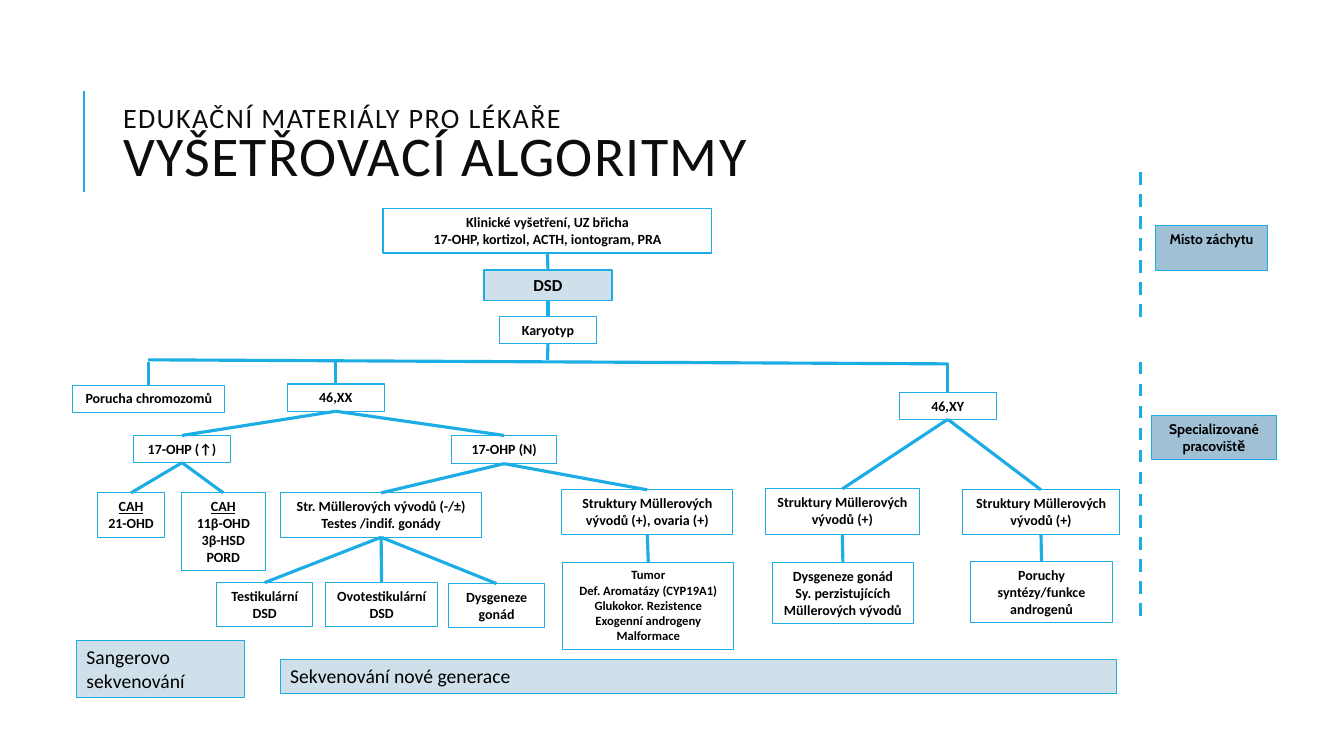
from pptx import Presentation
from pptx.dml.color import RGBColor
from pptx.enum.dml import MSO_LINE
from pptx.enum.shapes import MSO_CONNECTOR, MSO_SHAPE
from pptx.enum.text import MSO_ANCHOR, MSO_AUTO_SIZE, PP_ALIGN
from pptx.oxml.ns import qn
from pptx.util import Inches, Pt
from lxml.etree import SubElement

BLUE = RGBColor(0x1C, 0xAD, 0xE4)
PALE = RGBColor(0xCF, 0xE0, 0xEA)
STEEL = RGBColor(0xA0, 0xC1, 0xD5)
BLACK = RGBColor(0, 0, 0)
TITLE_INK = RGBColor(0x0D, 0x0D, 0x0D)
TOP, BOTTOM = 0, 2

# Content
TITLE_LINES = [("EDUKAČNÍ MATERIÁLY PRO LÉKAŘE", 20), ("VYŠETŘOVACÍ ALGORITMY", 40)]

# Flowchart boxes: left, top, width, height, text
BOXES = {
    "clinical": (3.8, 2.07, 3.26, 0.44,
                 "Klinické vyšetření, UZ břicha\n17-OHP, kortizol, ACTH, iontogram, PRA"),
    "dsd": (4.8, 2.68, 1.27, 0.3, "DSD"),
    "karyotype": (4.95, 3.14, 0.97, 0.27, "Karyotyp"),
    "chromosomes": (0.72, 3.82, 1.51, 0.27, "Porucha chromozomů"),
    "xx": (2.85, 3.81, 0.96, 0.27, "46,XX"),
    "xy": (8.92, 3.89, 0.96, 0.27, "46,XY"),
    "ohp_high": (1.32, 4.32, 0.97, 0.27, "17-OHP (↑)"),
    "ohp_normal": (4.48, 4.32, 1.04, 0.28, "17-OHP (N)"),
    "cah_21": (0.97, 4.89, 0.66, 0.44, "CAH\n21-OHD"),
    "cah_11": (1.8, 4.89, 0.83, 0.77, "CAH\n11β-OHD\n3β-HSD\nPORD"),
    "testes": (2.78, 4.89, 2, 0.44, "Str. Müllerových vývodů (-/±)\nTestes /indif. gonády"),
    "ovaries": (5.57, 4.86, 1.7, 0.44, "Struktury Müllerových vývodů (+), ovaria (+)"),
    "xy_left": (7.59, 4.85, 1.53, 0.45, "Struktury Müllerových vývodů (+)"),
    "xy_right": (9.55, 4.86, 1.55, 0.44, "Struktury Müllerových vývodů (+)"),
    "testicular": (2.15, 5.78, 0.95, 0.44, "Testikulární DSD"),
    "ovotesticular": (3.23, 5.78, 1.11, 0.44, "Ovotestikulární DSD"),
    "dysgenesis": (4.45, 5.79, 0.95, 0.44, "Dysgeneze gonád"),
    "tumor": (5.58, 5.58, 1.7, 0.86,
              "Tumor\nDef. Aromatázy (CYP19A1)\nGlukokor. Rezistence\n"
              "Exogenní androgeny\nMalformace"),
    "persistent": (7.66, 5.58, 1.4, 0.61,
                   "Dysgeneze gonád\nSy. perzistujících Müllerových vývodů"),
    "androgens": (9.63, 5.57, 1.4, 0.61, "Poruchy syntézy/funkce androgenů"),
}
BOX_STYLES = {
    "clinical": {"border": 1},
    "dsd": {"fill": PALE, "size": 12, "border": 1},
    "tumor": {"size": 9},
    "cah_21": {"underline_first": True},
    "cah_11": {"underline_first": True},
}
CHILDREN = {
    "clinical": ["dsd"],
    "dsd": ["karyotype"],
    "xx": ["ohp_high", "ohp_normal"],
    "xy": ["xy_left", "xy_right"],
    "ohp_high": ["cah_21", "cah_11"],
    "ohp_normal": ["testes", "ovaries"],
    "testes": ["testicular", "ovotesticular", "dysgenesis"],
    "ovaries": ["tumor"],
    "xy_left": ["persistent"],
    "xy_right": ["androgens"],
}

# Horizontal branch line under the karyotype, and the boxes hanging from it
BRANCH = (1.47, 3.57, 9.4, 3.61)
BRANCH_DROPS = {"chromosomes": 3.59, "xx": 3.57, "xy": 3.6}

SITES = [
    (11.46, 2.24, 1.11, 0.44, "Místo záchytu"),
    (11.42, 4.12, 1.24, 0.44, "Specializované\npracoviště"),
]
SITE_LINE_X = 11.31
SITE_SPANS = [(1.71, 3.16), (3.59, 6.19)]

METHODS = [
    (0.76, 6.35, 1.67, 0.57, "Sangerovo sekvenování"),
    (2.78, 6.54, 8.29, 0.34, "Sekvenování nové generace"),
]


def add_box(slide, left, top, width, height, text, fill=None, size=10, font="Calibri",
            bold=True, align=PP_ALIGN.CENTER, border=0.75, underline_first=False):
    shape = slide.shapes.add_shape(MSO_SHAPE.RECTANGLE, Inches(left), Inches(top),
                                   Inches(width), Inches(height))
    shape.shadow.inherit = False
    if fill is None:
        shape.fill.background()
    else:
        shape.fill.solid()
        shape.fill.fore_color.rgb = fill
    shape.line.color.rgb = BLUE
    shape.line.width = Pt(border)
    frame = shape.text_frame
    frame.word_wrap = True
    frame.vertical_anchor = MSO_ANCHOR.TOP
    frame.text = text
    for index, paragraph in enumerate(frame.paragraphs):
        paragraph.alignment = align
        for run in paragraph.runs:
            run.font.name = font
            run.font.size = Pt(size)
            run.font.bold = bold
            run.font.color.rgb = BLACK
            if underline_first and index == 0:
                run.font.underline = True
    return shape


def add_line(slide, x1, y1, x2, y2, width=2.25):
    line = slide.shapes.add_connector(MSO_CONNECTOR.STRAIGHT, Inches(x1), Inches(y1),
                                      Inches(x2), Inches(y2))
    line.line.color.rgb = BLUE
    line.line.width = Pt(width)
    SubElement(line._element.spPr, qn("a:effectLst"))
    return line


def add_title(slide):
    title = slide.shapes.title
    title.left, title.top = Inches(1.12), Inches(0.64)
    title.width, title.height = Inches(10.63), Inches(1.64)
    frame = title.text_frame
    frame.auto_size = MSO_AUTO_SIZE.NONE
    frame.vertical_anchor = MSO_ANCHOR.MIDDLE
    frame.text = "\v".join(text for text, size in TITLE_LINES)
    paragraph = frame.paragraphs[0]
    paragraph.alignment = PP_ALIGN.LEFT
    paragraph.line_spacing = 0.8
    for run, (text, size) in zip(paragraph.runs, TITLE_LINES):
        run.font.name = "Calibri"
        run.font.size = Pt(size)
        run.font.color.rgb = TITLE_INK
        run.font._element.set("spc", "100")


def add_flowchart(slide):
    boxes = {name: add_box(slide, *box, **BOX_STYLES.get(name, {}))
             for name, box in BOXES.items()}

    # Parent to child lines
    for parent, children in CHILDREN.items():
        for child in children:
            line = add_line(slide, 0, 0, 1, 1)
            line.begin_connect(boxes[parent], BOTTOM)
            line.end_connect(boxes[child], TOP)

    # Karyotype branch
    add_line(slide, *BRANCH)
    stem = add_line(slide, 5.43, 3.41, 5.43, 3.57)
    stem.begin_connect(boxes["karyotype"], BOTTOM)
    for name, start in BRANCH_DROPS.items():
        left, top, width = BOXES[name][:3]
        center = left + width / 2
        drop = add_line(slide, center, start, center, top)
        drop.end_connect(boxes[name], TOP)


def main():
    presentation = Presentation()
    presentation.slide_width, presentation.slide_height = Inches(13.33), Inches(7.5)
    slide = presentation.slides.add_slide(presentation.slide_layouts[5])

    # Title with its accent line
    add_title(slide)
    add_line(slide, 0.83, 1.9, 0.83, 0.9, width=1.5)

    add_flowchart(slide)

    # Places of care on the right
    for site in SITES:
        add_box(slide, *site, fill=STEEL, font="Cabin")
    for start, end in SITE_SPANS:
        divider = add_line(slide, SITE_LINE_X, start, SITE_LINE_X, end)
        divider.line.dash_style = MSO_LINE.DASH

    # Sequencing methods along the bottom
    for method in METHODS:
        add_box(slide, *method, fill=PALE, size=14, bold=False, align=PP_ALIGN.LEFT)

    presentation.save("out.pptx")


if __name__ == "__main__":
    main()
